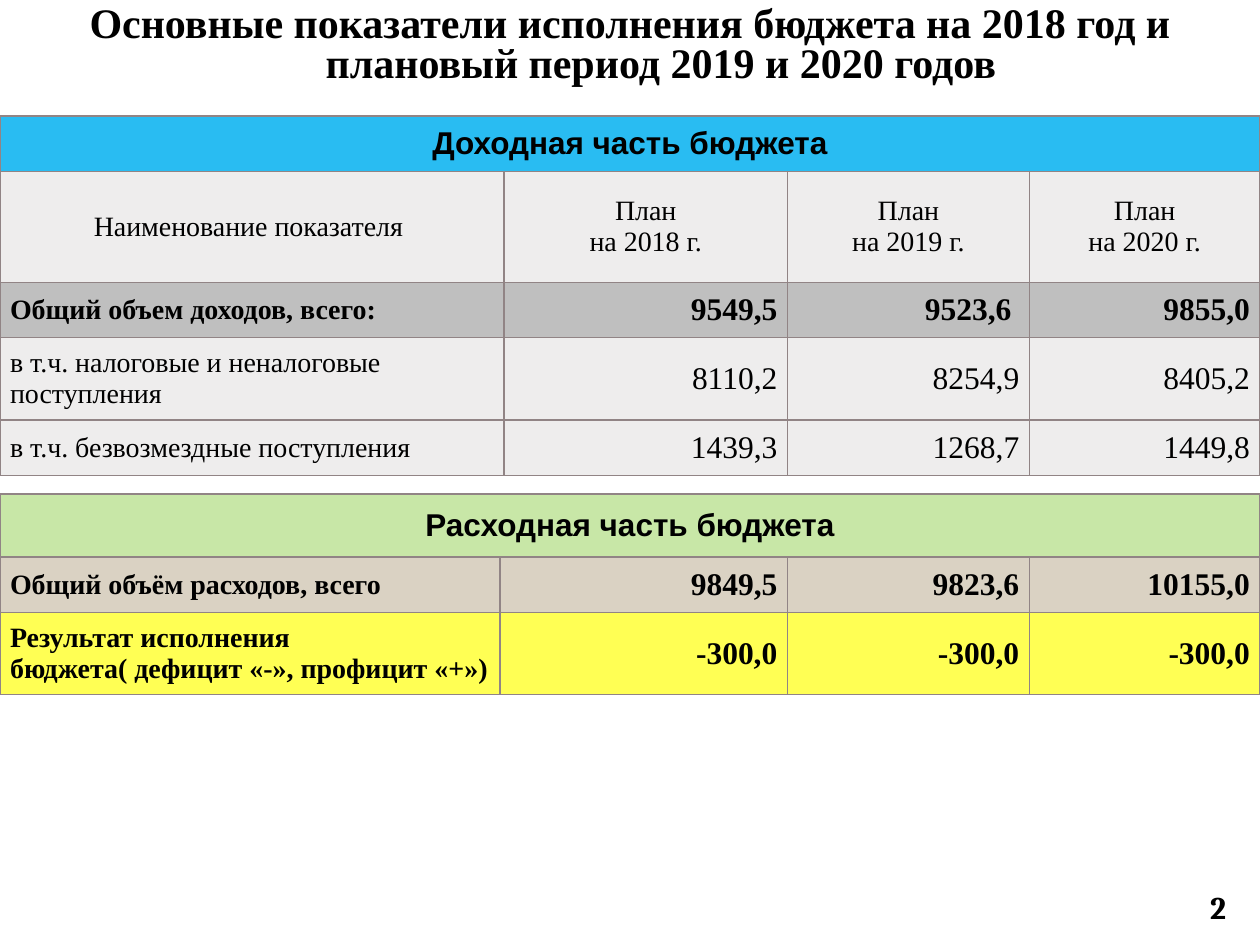
from lxml.etree import SubElement
from pptx import Presentation
from pptx.dml.color import RGBColor
from pptx.enum.text import MSO_ANCHOR, MSO_AUTO_SIZE, PP_ALIGN
from pptx.oxml import parse_xml
from pptx.oxml.ns import nsdecls, qn
from pptx.util import Inches, Pt

TITLE = "Основные показатели исполнения бюджета на 2018 год и плановый период 2019 и 2020 годов"
SERIF, SANS = "Times New Roman", "Arial"
BORDER = "918485"
LIGHT = "EEEDED"

# Each row: height, fill, opacity in percent, bold, cell texts
INCOME = {
    "top": 0.92,
    "cols": [4, 2.25, 1.92, 1.83],
    "rows": [
        (0.44, "00B0F0", 84, True, ["Доходная часть бюджета"]),
        (0.88, LIGHT, 100, False, ["Наименование показателя ", "План\nна 2018 г.",
                                   "План\nна 2019 г.", "План\nна 2020 г."]),
        (0.44, "BFBFBF", 100, True, ["Общий объем доходов, всего:", "9549,5", "9523,6 ", "9855,0"]),
        (0.65, LIGHT, 100, False, ["в т.ч. налоговые и неналоговые поступления",
                                   "8110,2", "8254,9", "8405,2"]),
        (0.44, LIGHT, 100, False, ["в т.ч. безвозмездные поступления", "1439,3", "1268,7", "1449,8"]),
    ],
    "header_row": 1,
}
EXPENSES = {
    "top": 3.92,
    "cols": [3.97, 2.28, 1.92, 1.83],
    "rows": [
        (0.5, "92D050", 50, True, ["Расходная часть бюджета"]),
        (0.44, "DAD2C3", 100, True, ["Общий объём расходов, всего", "9849,5", "9823,6", "10155,0"]),
        (0.65, "FFFF00", 67, True, ["Результат исполнения бюджета( дефицит «-», профицит «+»)",
                                    "-300,0", "-300,0", "-300,0"]),
    ],
    "header_row": None,
}


def rgb(color):
    return RGBColor.from_string(color)


def format_text(tf, size, font, bold, align):
    for p in tf.paragraphs:
        p.alignment = align
        for r in p.runs:
            r.font.size = Pt(size)
            r.font.name = font
            r.font.bold = bold
            r.font.color.rgb = rgb("000000")


def format_cell(cell, color, opacity):
    cell.vertical_anchor = MSO_ANCHOR.MIDDLE
    cell.margin_left = cell.margin_right = Inches(0.08)
    cell.margin_top = cell.margin_bottom = Inches(0.08)
    cell.fill.solid()
    cell.fill.fore_color.rgb = rgb(color)
    tcPr = cell._tc.get_or_add_tcPr()
    if opacity < 100:
        clr = tcPr.find(qn("a:solidFill")).find(qn("a:srgbClr"))
        SubElement(clr, qn("a:alpha"), val=str(opacity * 1000))
    # Borders stand before the fill
    for i, side in enumerate(["lnL", "lnR", "lnT", "lnB"]):
        tcPr.insert(i, parse_xml(
            f'<a:{side} {nsdecls("a")} w="{Pt(1)}"><a:solidFill>'
            f'<a:srgbClr val="{BORDER}"/></a:solidFill></a:{side}>'))


def add_budget_table(s, data):
    rows, cols = data["rows"], data["cols"]
    height = sum(row[0] for row in rows)
    tbl = s.shapes.add_table(len(rows), len(cols), 0, Inches(data["top"]),
                             Inches(sum(cols)), Inches(height)).table
    tbl.horz_banding = False
    for col, width in zip(tbl.columns, cols):
        col.width = Inches(width)
    tbl.cell(0, 0).merge(tbl.cell(0, len(cols) - 1))
    for i, (row_height, color, opacity, bold, texts) in enumerate(rows):
        tbl.rows[i].height = Inches(row_height)
        for j in range(len(cols)):
            format_cell(tbl.cell(i, j), color, opacity)
        for j, text in enumerate(texts):
            tf = tbl.cell(i, j).text_frame
            tf.text = text
            if i == 0:
                style = 18, SANS, bold, PP_ALIGN.CENTER
            elif i == data["header_row"]:
                style = 16, SERIF, bold, PP_ALIGN.CENTER
            elif j == 0:
                style = 16, SERIF, bold, PP_ALIGN.LEFT
            else:
                style = 18, SERIF, bold, PP_ALIGN.RIGHT
            format_text(tf, *style)


prs = Presentation()
prs.slide_width, prs.slide_height = Inches(10), Inches(7.5)
s = prs.slides.add_slide(prs.slide_layouts[5])

# Title with a hanging indent
title = s.shapes.title
title.left, title.top, title.width, title.height = 0, Inches(0.17), Inches(10), Inches(0.4)
tf = title.text_frame
tf.text = TITLE
tf.word_wrap = True
tf.auto_size = MSO_AUTO_SIZE.NONE
tf.vertical_anchor = MSO_ANCHOR.MIDDLE
p = tf.paragraphs[0]
p.line_spacing = 0.8
pPr = p._p.get_or_add_pPr()
pPr.set("marL", str(Inches(0.49)))
pPr.set("indent", str(Inches(-0.49)))
format_text(tf, 24, SERIF, True, PP_ALIGN.CENTER)

# Budget tables
for data in (INCOME, EXPENSES):
    add_budget_table(s, data)

# Page number
sp = s.shapes.add_textbox(Inches(9.33), Inches(7), Inches(0.5), Inches(0.4))
sp.text_frame.text = "2"
sp.text_frame.word_wrap = True
format_text(sp.text_frame, 18, "Cambria", True, PP_ALIGN.RIGHT)

prs.save("out.pptx")
